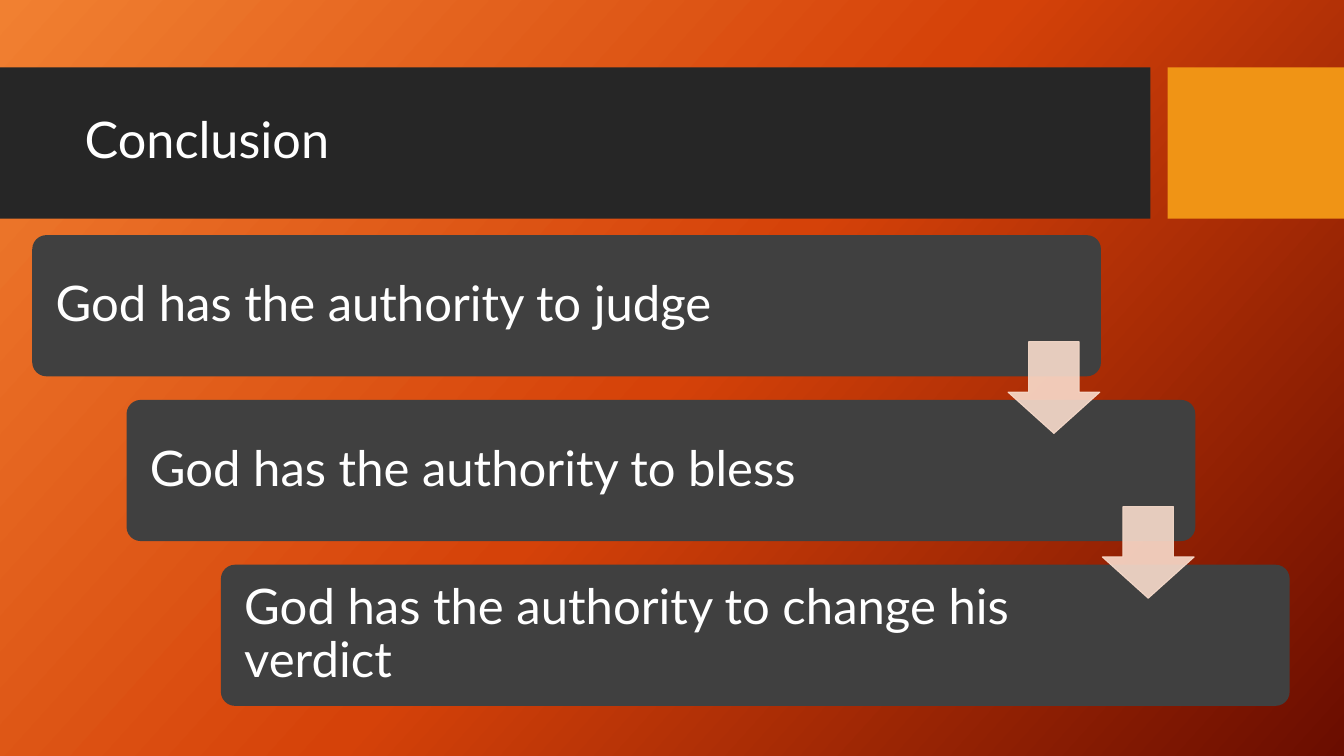
from dataclasses import dataclass
from typing import Any

from lxml.etree import SubElement
from pptx import Presentation
from pptx.dml.color import RGBColor
from pptx.dml.fill import FillFormat
from pptx.enum.shapes import MSO_SHAPE
from pptx.enum.text import MSO_ANCHOR, MSO_AUTO_SIZE, PP_ALIGN
from pptx.oxml.ns import qn
from pptx.slide import Slide
from pptx.util import Inches, Pt

WIDE, HIGH = Inches(13.33), Inches(7.5)


@dataclass(frozen=True)
class Theme:
    sky: tuple = ((0, "F18031"), (50, "D54209"), (100, "6A0D00"))
    angle: int = 42
    band: str = "262626"
    accent: str = "F09415"
    card: str = "404040"
    arrow: str = "F9DCCC"
    alpha: int = 90
    ink: str = "FFFFFF"
    font: str = "Lato"
    title: int = 36
    body: int = 35


@dataclass(frozen=True)
class Box:
    """A place in percent of the slide's width and height."""
    left: float
    top: float
    width: float
    height: float

    def step(self, count: int) -> "Box":
        """Move down the stairs by a count of steps."""
        return Box(self.left + 7.02 * count, self.top + 21.8 * count,
                   self.width, self.height)

    def place(self) -> dict[str, int]:
        return {"left": round(WIDE * self.left / 100),
                "top": round(HIGH * self.top / 100),
                "width": round(WIDE * self.width / 100),
                "height": round(HIGH * self.height / 100)}


@dataclass(frozen=True)
class Band:
    box: Box
    color: str


THEME = Theme()
TITLE = Box(5.55, 10.93, 78.85, 15.73)
CARD = Box(2.4, 31.1, 79.52, 18.67)
ARROW = Box(75, 45.2, 6.83, 12.13)
BANDS = (Band(Box(0, 8.93, 85.6, 20), THEME.band),
         Band(Box(86.87, 8.93, 13.13, 20), THEME.accent))
POINTS = ("God has the authority to judge",
          "God has the authority to bless",
          "God has the authority to change his verdict")
TITLE_FRAME = {"word_wrap": True, "auto_size": MSO_AUTO_SIZE.NONE,
               "vertical_anchor": MSO_ANCHOR.MIDDLE}
CARD_FRAME = TITLE_FRAME | {
    "margin_left": Inches(0.19), "margin_right": Inches(2.04),
    "margin_top": Inches(0.19), "margin_bottom": Inches(0.19)}


def apply(target: Any, values: dict[str, Any]) -> None:
    for name, value in values.items():
        setattr(target, name, value)


def paint(fill: FillFormat, color: str) -> None:
    fill.solid()
    fill.fore_color.rgb = RGBColor.from_string(color)


def draw(slide: Slide, kind: MSO_SHAPE, box: Box, color: str,
         adjust: tuple[float, ...] = ()) -> Any:
    shape = slide.shapes.add_shape(kind, **box.place())
    shape.shadow.inherit = False
    paint(shape.fill, color)
    shape.line.fill.background()
    for index, value in enumerate(adjust):
        shape.adjustments[index] = value
    return shape


def write(shape: Any, text: str, size: int, frame: dict[str, Any]) -> None:
    apply(shape.text_frame, frame)
    shape.text_frame.text = text
    para = shape.text_frame.paragraphs[0]
    apply(para, {"alignment": PP_ALIGN.LEFT, "line_spacing": 0.9})
    apply(para.font, {"name": THEME.font, "size": Pt(size)})
    para.font.color.rgb = RGBColor.from_string(THEME.ink)


def shade(slide: Slide) -> None:
    """Fill the background with the theme's gradient."""
    fill = slide.background.fill
    fill.gradient()
    fill.gradient_angle = 360 - THEME.angle
    stops = next(slide.background.element.iter(qn("a:gsLst"))
                 if hasattr(slide.background, "element")
                 else slide.element.iter(qn("a:gsLst")))
    for stop in list(stops):
        stops.remove(stop)
    for share, color in THEME.sky:
        stop = SubElement(stops, qn("a:gs"), pos=str(share * 1000))
        SubElement(stop, qn("a:srgbClr"), val=color)


def point(slide: Slide, box: Box) -> None:
    """Draw a translucent arrow down to the next card."""
    arrow = draw(slide, MSO_SHAPE.DOWN_ARROW, box, THEME.arrow, (0.55, 0.45))
    paint(arrow.line.fill, THEME.arrow)
    arrow.line.width = Pt(0.75)
    for color in arrow.element.spPr.iter(qn("a:srgbClr")):
        SubElement(color, qn("a:alpha"), val=str(THEME.alpha * 1000))


def main() -> None:
    deck = Presentation()
    apply(deck, {"slide_width": WIDE, "slide_height": HIGH})
    slide = deck.slides.add_slide(deck.slide_layouts[5])
    shade(slide)
    for band in BANDS:
        draw(slide, MSO_SHAPE.RECTANGLE, band.box, band.color)

    title = slide.shapes.title
    title.element.getparent().append(title.element)
    apply(title, TITLE.place())
    write(title, "Conclusion", THEME.title, TITLE_FRAME)

    for index, text in enumerate(POINTS):
        card = draw(slide, MSO_SHAPE.ROUNDED_RECTANGLE, CARD.step(index),
                    THEME.card, (0.1,))
        write(card, text, THEME.body, CARD_FRAME)
    for index in range(len(POINTS) - 1):
        point(slide, ARROW.step(index))
    deck.save("out.pptx")


if __name__ == "__main__":
    main()
